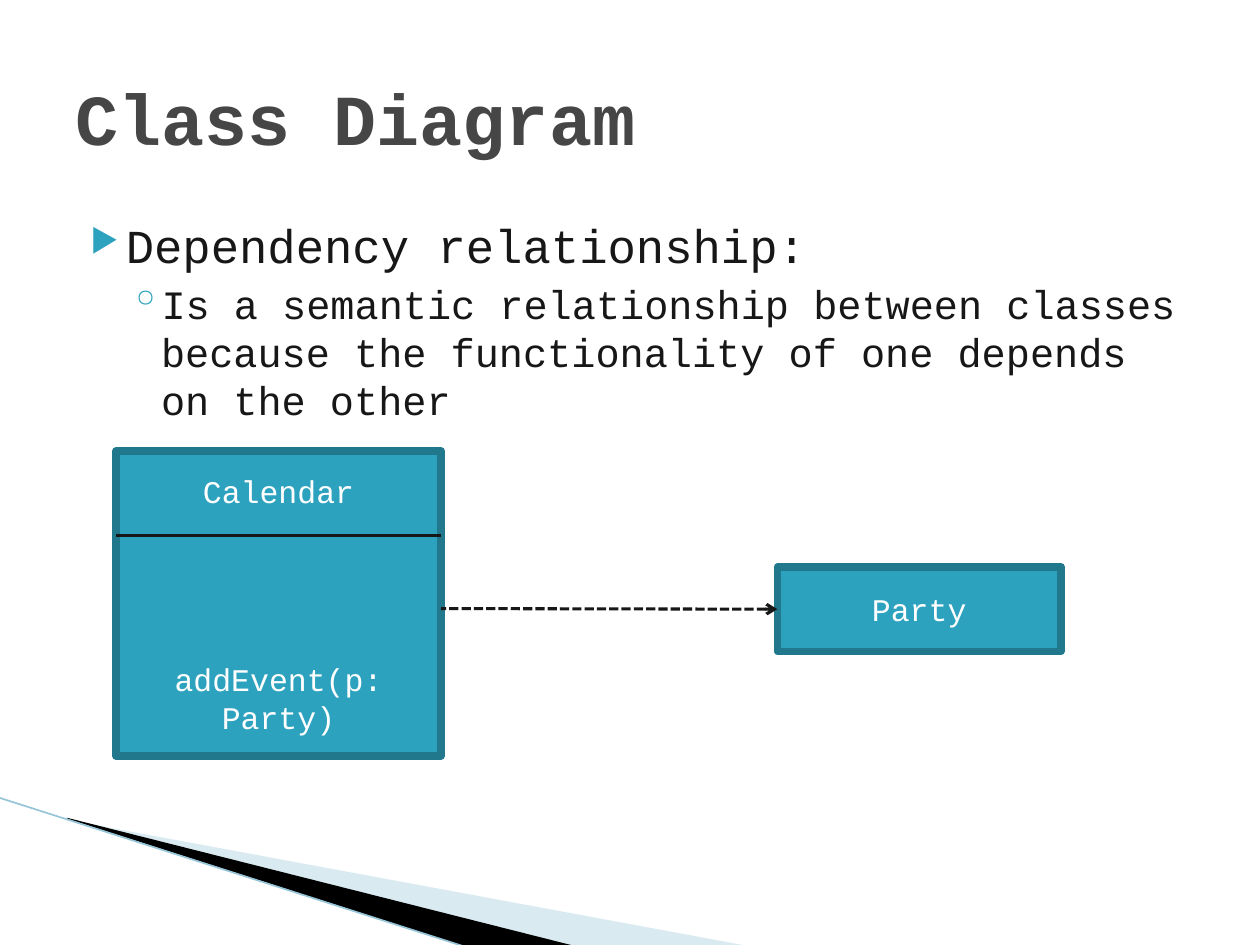
from dataclasses import dataclass

from pptx import Presentation
from pptx.dml.color import RGBColor
from pptx.enum.dml import MSO_LINE_DASH_STYLE as DASH
from pptx.enum.shapes import MSO_CONNECTOR, MSO_SHAPE
from pptx.enum.text import MSO_ANCHOR, PP_ALIGN
from pptx.oxml.ns import qn
from pptx.util import Inches, Pt
from lxml.etree import SubElement


@dataclass(frozen=True)
class Theme:
    """Colours, font and type sizes of the slide."""
    font: str = "Courier New"
    accent: str = "2DA2BF"
    outline: str = "21788D"
    ink: str = "171717"
    title: str = "464646"
    white: str = "FFFFFF"
    black: str = "000000"
    pale: str = "A0CBDC"
    edge: str = "97C5D8"
    title_size: float = 41
    body_size: float = 27
    detail_size: float = 23
    label_size: float = 18


THEME = Theme()


def rgb(value):
    """Turn a hex string into a colour."""
    return RGBColor.from_string(value)


def style_text(paragraph, size, color, bold=False):
    """Set the font of a whole paragraph."""
    font = paragraph.font
    font.name, font.size, font.bold = THEME.font, Pt(size), bold
    font.color.rgb = rgb(color)


def add_bullet(paragraph, char, left, hanging, percent=100):
    """Give a paragraph an accent-coloured hanging bullet."""
    properties = paragraph._p.get_or_add_pPr()
    properties.set("marL", str(Inches(left)))
    properties.set("indent", str(-Inches(hanging)))
    color = SubElement(properties, qn("a:buClr"))
    SubElement(color, qn("a:srgbClr"), val=THEME.accent)
    SubElement(properties, qn("a:buSzPct"), val=str(percent * 1000))
    SubElement(properties, qn("a:buChar"), char=char)


def set_title(slide, text):
    """Place and format the title placeholder."""
    title = slide.shapes.title
    title.left, title.top = Inches(0.5), Inches(0.3)
    title.width, title.height = Inches(9), Inches(1.25)
    title.text_frame.text = text
    title.text_frame.vertical_anchor = MSO_ANCHOR.MIDDLE
    paragraph = title.text_frame.paragraphs[0]
    paragraph.alignment = PP_ALIGN.LEFT
    style_text(paragraph, THEME.title_size, THEME.title, bold=True)


def add_body(slide, heading, detail):
    """Add the bulleted heading and its sub-point."""
    box = slide.shapes.add_textbox(Inches(0.5), Inches(1.67), Inches(9), Inches(4.9))
    frame = box.text_frame
    frame.word_wrap = True
    first, second = frame.paragraphs[0], frame.add_paragraph()
    first.text, second.text = heading, detail
    second.level = 1
    second.space_before = Pt(3.2)
    add_bullet(first, "▶", 0.4, 0.28, 68)
    add_bullet(second, "◦", 0.68, 0.25)
    style_text(first, THEME.body_size, THEME.ink)
    style_text(second, THEME.detail_size, THEME.ink)


def add_wedge(slide, points, color, opacity=100):
    """Add a filled decorative polygon."""
    corners = [(Inches(x), Inches(y)) for x, y in points]
    builder = slide.shapes.build_freeform(*corners[0])
    builder.add_line_segments(corners[1:], close=True)
    shape = builder.convert_to_shape()
    shape.shadow.inherit = False
    shape.fill.solid()
    shape.fill.fore_color.rgb = rgb(color)
    shape.line.fill.background()
    if opacity < 100:
        fill_color = shape._element.spPr.find(qn("a:solidFill"))[0]
        SubElement(fill_color, qn("a:alpha"), val=str(opacity * 1000))


def add_line(slide, start, end, color, width):
    """Add a straight line without a shadow."""
    ends = [Inches(value) for value in (*start, *end)]
    line = slide.shapes.add_connector(MSO_CONNECTOR.STRAIGHT, *ends)
    line.line.color.rgb = rgb(color)
    line.line.width = Pt(width)
    SubElement(line._element.spPr, qn("a:effectLst"))
    return line


def add_class_box(slide, left, top, width, height, labels, gap=0):
    """Add a class rectangle with centred labels set apart by a gap."""
    shape = slide.shapes.add_shape(
        MSO_SHAPE.RECTANGLE, Inches(left), Inches(top), Inches(width), Inches(height))
    shape.shadow.inherit = False
    shape.fill.solid()
    shape.fill.fore_color.rgb = rgb(THEME.accent)
    shape.line.color.rgb = rgb(THEME.outline)
    shape.line.width = Pt(4.33)
    SubElement(shape.line._get_or_add_ln(), qn("a:round"))
    frame = shape.text_frame
    frame.word_wrap = True
    frame.vertical_anchor = MSO_ANCHOR.MIDDLE
    for index, label in enumerate(labels):
        paragraph = frame.add_paragraph() if index else frame.paragraphs[0]
        paragraph.text = label
        paragraph.alignment = PP_ALIGN.CENTER
        if index:
            paragraph.space_before = Pt(gap)
        style_text(paragraph, THEME.label_size, THEME.white)
    return shape


def add_dependency(slide, target, start, end):
    """Add a dashed line whose arrowhead meets the target's left side."""
    line = add_line(slide, start, end, THEME.ink, 1.75)
    line.begin_connect(target, 1)
    line.line.dash_style = DASH.SQUARE_DOT
    SubElement(line.line._get_or_add_ln(), qn("a:headEnd"), type="arrow")


def main():
    """Build and save the slide."""
    presentation = Presentation()
    presentation.slide_width, presentation.slide_height = Inches(10), Inches(7.5)
    slide = presentation.slides.add_slide(presentation.slide_layouts[5])

    add_wedge(slide, [(0.55, 6.51), (5.95, 7.51), (4.56, 7.51), (0.55, 6.5)], THEME.pale, 40)
    add_wedge(slide, [(0.53, 6.49), (4.57, 7.51), (3.72, 7.52), (0.54, 6.5)], THEME.black)
    add_line(slide, (-0.01, 6.33), (3.71, 7.52), THEME.edge, 0.95)

    set_title(slide, "Class Diagram")
    add_body(slide, "Dependency relationship:",
             "Is a semantic relationship between classes because the "
             "functionality of one depends on the other")

    add_class_box(slide, 0.92, 3.58, 2.58, 2.42, ["Calendar", "addEvent(p: Party)"], gap=86)
    party = add_class_box(slide, 6.17, 4.5, 2.25, 0.67, ["Party"])
    add_dependency(slide, party, (6.17, 4.83), (3.5, 4.83))
    add_line(slide, (0.92, 4.25), (3.5, 4.25), THEME.ink, 1.75)
    presentation.save("out.pptx")


if __name__ == "__main__":
    main()
